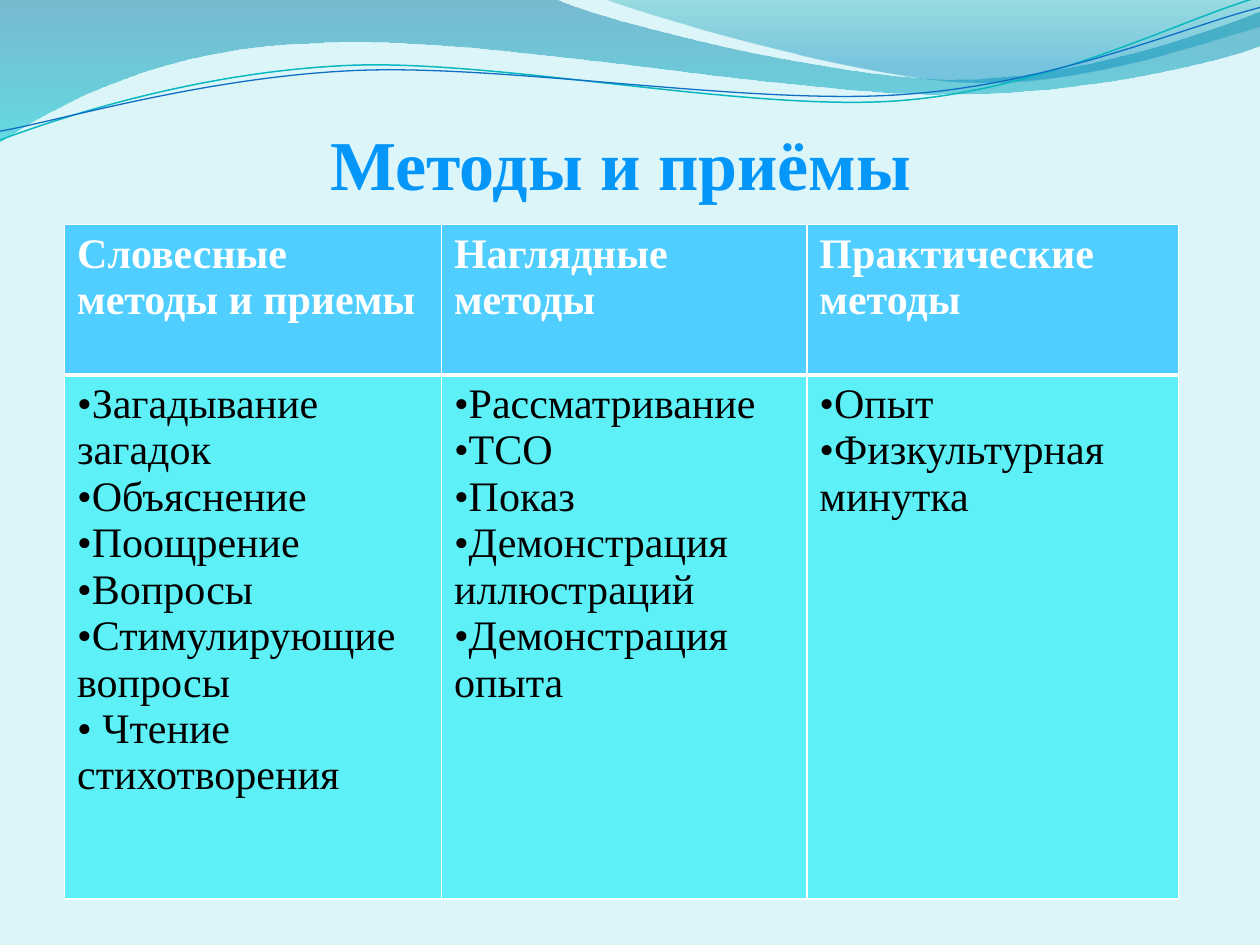
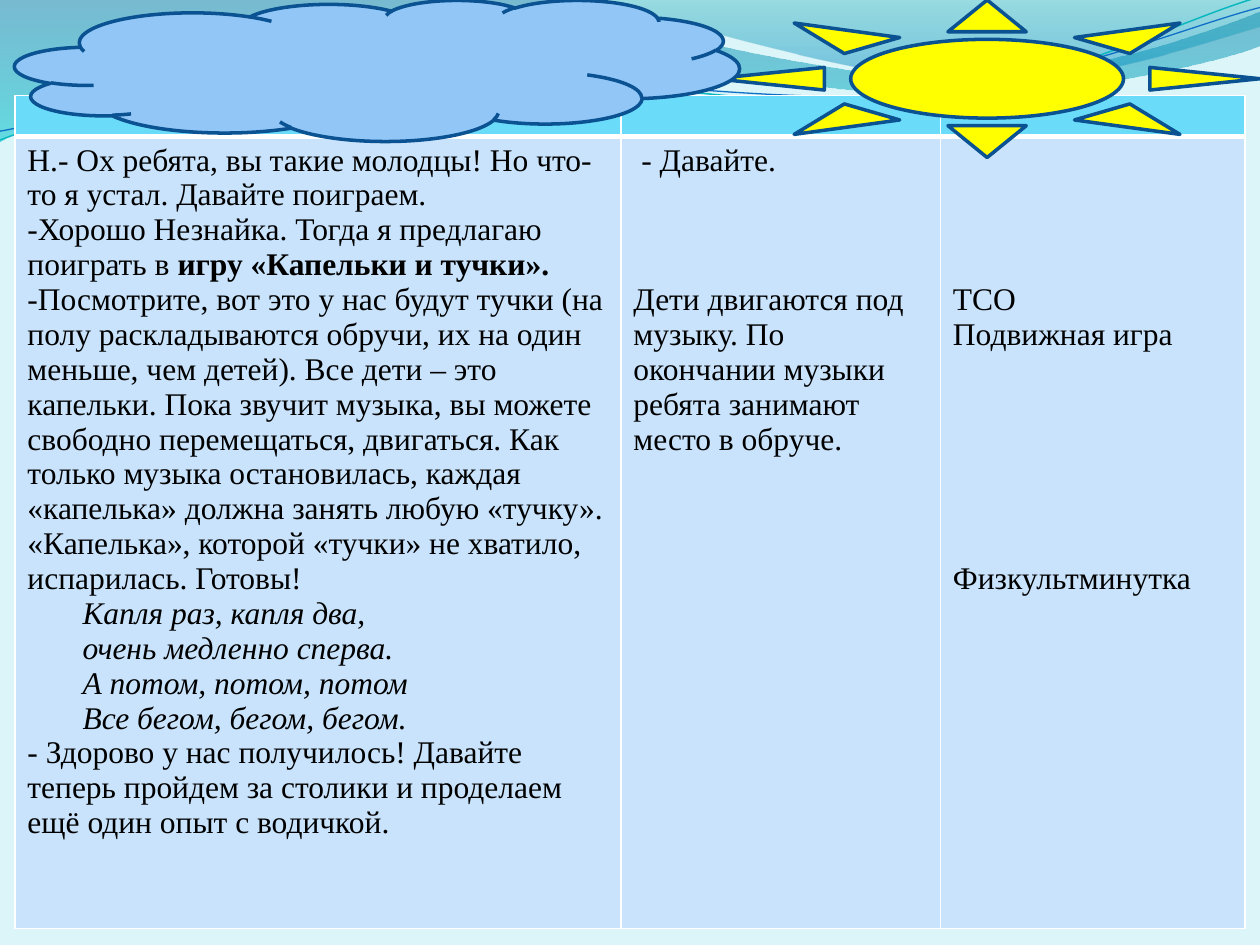
from dataclasses import dataclass

from lxml import etree
from pptx import Presentation
from pptx.dml import color
from pptx.enum import shapes, text
from pptx.oxml import ns
from pptx.util import Pt

FONT = "Times New Roman"
BACKGROUND, WHITE, BLACK = "DBF5F9", "FFFFFF", "000000"
TITLE_BLUE, OUTLINE_BLUE = "0497F9", "0B5292"
LINE_HEIGHT = 19.93  # one line of 18 pt body text

# Each band: start point, then curves (six numbers) and straight lines (two).
WIDE_WAVE = [(0, 0), (317, -0.7), (343, 12, 478, 45.2, 546, 45.2),
             (614, 45.2, 690, 18.7, 720, 6.5), (720.7, 26),
             (708, 31.7, 626, 54.7, 537, 54), (447.8, 54, 275, 20.2, 185, 24.5),
             (93, 26, 33, 59.8, -0.7, 81.4)]
CORNER_WAVE = [(345, -0.7), (366.5, 8, 491, 44.6, 553.7, 46.8),
               (616.3, 49.7, 692, 23, 720, 15.1), (720, 0)]
TEAL_STRAND = [(0, 80), (34.6, 67, 113.8, 41, 199.4, 37.4),
               (284.4, 33.8, 427, 64, 513.4, 57.6),
               (599.8, 51.1, 675.4, 10.8, 718.6, -1.4)]
BLUE_STRAND = [(0, 75), (33.8, 69.1, 118, 43.9, 203.8, 40.3),
               (290.2, 36.7, 430, 60.5, 516.2, 54),
               (602, 48.2, 677.5, 15.1, 720, 4.3)]


@dataclass
class Para:
    text: str
    bold_tail: str = ""
    bullet: str = ""
    italic: bool = False
    indent: float = 0
    lines_before: int = 0


def rgb(value):
    return color.RGBColor.from_string(value)


def add_xml(parent, tag, **attributes):
    return etree.SubElement(parent, ns.qn(tag), attributes)


class Deck:
    def __init__(self):
        self.prs = Presentation()
        self.prs.slide_width, self.prs.slide_height = Pt(720), Pt(540)
        fill = self.prs.slide_master.background.fill
        fill.solid()
        fill.fore_color.rgb = rgb(BACKGROUND)
        self.slide = None

    def new_slide(self):
        self.slide = self.prs.slides.add_slide(self.prs.slide_layouts[6])
        self.wave(WIDE_WAVE, [(0, "0074A1", 45), (100, "00C6CF", 55)])
        self.wave(CORNER_WAVE, [(0, "00A1A9", 30), (80, "008BBF", 45)])
        self.strand(TEAL_STRAND, "0AB8BF", 0.85)
        self.strand(BLUE_STRAND, "0F6FC6", 0.75)

    def outline(self, steps, close):
        """Build a freeform through the end points, then bend its curved segments."""
        anchors = [(Pt(step[-2]), Pt(step[-1])) for step in steps]
        builder = self.slide.shapes.build_freeform(*anchors[0])
        builder.add_line_segments(anchors[1:], close=close)
        band = builder.convert_to_shape()
        band.shadow.inherit = False
        segments = list(band._element.iter(ns.qn("a:lnTo")))
        for segment, step in zip(segments, steps[1:]):
            if len(step) == 2:
                continue
            curve = etree.Element(ns.qn("a:cubicBezTo"))
            for x, y in zip(step[::2], step[1::2]):
                add_xml(curve, "a:pt", x=str(Pt(x) - band.left), y=str(Pt(y) - band.top))
            segment.getparent().replace(segment, curve)
        return band

    def wave(self, steps, stops):
        """Draw a closed band; stops are (position %, colour, opacity %)."""
        band = self.outline(steps, True)
        band.line.fill.background()
        band.fill.gradient()
        gradient = band._element.spPr.find(ns.qn("a:gradFill"))
        for child in list(gradient):
            gradient.remove(child)
        stop_list = add_xml(gradient, "a:gsLst")
        for position, value, opacity in stops:
            stop = add_xml(stop_list, "a:gs", pos=str(position * 1000))
            tint = add_xml(stop, "a:srgbClr", val=value)
            add_xml(tint, "a:alpha", val=str(opacity * 1000))
        add_xml(gradient, "a:lin", ang="5400000", scaled="0")

    def strand(self, steps, value, width):
        band = self.outline(steps, False)
        band.fill.background()
        band.line.color.rgb = rgb(value)
        band.line.width = Pt(width)

    def style(self, paragraph, size, value, bold=False, italic=False):
        font = paragraph.font
        font.name, font.size = FONT, Pt(size)
        font.bold, font.italic = bold, italic
        font.color.rgb = rgb(value)

    def title(self, wording):
        box = self.slide.shapes.add_textbox(Pt(25.2), Pt(55.4), Pt(659), Pt(61.2))
        frame = box.text_frame
        frame.word_wrap = True
        frame.vertical_anchor = text.MSO_ANCHOR.BOTTOM
        frame.margin_left = frame.margin_right = frame.margin_bottom = 0
        paragraph = frame.paragraphs[0]
        paragraph.text = wording
        paragraph.alignment = text.PP_ALIGN.CENTER
        self.style(paragraph, 40, TITLE_BLUE, bold=True)

    def borders(self, cell, is_header):
        widths = {"L": 1, "R": 1, "T": 1, "B": 3 if is_header else 1}
        properties = cell._tc.get_or_add_tcPr()
        for side, width in widths.items():
            edge = add_xml(properties, f"a:ln{side}", w=str(Pt(width)))
            add_xml(add_xml(edge, "a:solidFill"), "a:srgbClr", val=WHITE)

    def fill_cell(self, cell, paras, size, value, bold):
        if not paras:
            cell.margin_top = cell.margin_bottom = 0
            self.style(cell.text_frame.paragraphs[0], 14, value)
        for i, para in enumerate(paras):
            frame = cell.text_frame
            paragraph = frame.add_paragraph() if i else frame.paragraphs[0]
            properties = paragraph._p.get_or_add_pPr()
            properties.set("marL", str(Pt(para.indent)))
            properties.set("indent", "0")
            if para.bullet:
                add_xml(properties, "a:buFont", typeface=FONT)
                add_xml(properties, "a:buChar", char=para.bullet)
            gap = para.lines_before * LINE_HEIGHT
            if gap and i:
                paragraph.space_before = Pt(gap)
            elif gap:
                cell.margin_top = Pt(3.6 + gap)
            paragraph.add_run().text = para.text
            if para.bold_tail:
                tail = paragraph.add_run()
                tail.text = para.bold_tail
                tail.font.bold = True
            self.style(paragraph, size, value, bold, para.italic)

    def table(self, left, top, widths, heights, rows, fills, size):
        """Draw a header row and a body row; each cell is a list of Para."""
        grid = self.slide.shapes.add_table(
            len(heights), len(widths), Pt(left), Pt(top),
            Pt(sum(widths)), Pt(sum(heights))).table
        grid.horz_banding = False
        for column, width in zip(grid.columns, widths):
            column.width = Pt(width)
        for r, height in enumerate(heights):
            grid.rows[r].height = Pt(height)
            is_header = r == 0
            for c, paras in enumerate(rows[r]):
                cell = grid.cell(r, c)
                self.borders(cell, is_header)
                cell.fill.solid()
                cell.fill.fore_color.rgb = rgb(fills[r])
                self.fill_cell(cell, paras, size, WHITE if is_header else BLACK, is_header)

    def shape(self, kind, left, top, width, height, value):
        figure = self.slide.shapes.add_shape(kind, Pt(left), Pt(top), Pt(width), Pt(height))
        figure.shadow.inherit = False
        figure.fill.solid()
        figure.fill.fore_color.rgb = rgb(value)
        figure.line.color.rgb = rgb(OUTLINE_BLUE)
        figure.line.width = Pt(2)


def methods_slide(deck):
    deck.new_slide()
    deck.title("Методы и приёмы")
    methods = {
        "Словесные методы и приемы": [
            "Загадывание загадок", "Объяснение", "Поощрение", "Вопросы",
            "Стимулирующие вопросы", " Чтение стихотворения"],
        "Наглядные методы": [
            "Рассматривание", "ТСО", "Показ", "Демонстрация иллюстраций",
            "Демонстрация опыта"],
        "Практические методы": ["Опыт", "Физкультурная минутка"],
    }
    headings = [[Para(name)] for name in methods]
    lists = [[Para(item, bullet="•") for item in items] for items in methods.values()]
    deck.table(36.9, 128.2, [215.4, 208.8, 212.4], [86, 299.5],
               [headings, lists], ["4FCEFF", "5EF0F7"], 24)


def game_slide(deck):
    deck.new_slide()
    rhyme = ["Капля раз, капля два,", "очень медленно сперва.",
             "А потом, потом, потом", "Все бегом, бегом, бегом."]
    teacher = [
        Para("Н.- Ох ребята, вы такие молодцы! Но что-то я устал. Давайте поиграем."),
        Para("Хорошо Незнайка. Тогда я предлагаю поиграть в ",
             bold_tail="игру «Капельки и тучки».", bullet="-"),
        Para("Посмотрите, вот это у нас будут тучки (на полу раскладываются обручи, "
             "их на один меньше, чем детей). Все дети – это капельки. Пока звучит "
             "музыка, вы можете свободно перемещаться, двигаться. Как только музыка "
             "остановилась, каждая «капелька» должна занять любую «тучку». "
             "«Капелька», которой «тучки» не хватило, испарилась. Готовы!", bullet="-"),
        *[Para(verse, italic=True, indent=31.5) for verse in rhyme],
        Para("- Здорово у нас получилось! Давайте теперь пройдем за столики "
             "и проделаем ещё один опыт с водичкой."),
    ]
    children = [
        Para("- Давайте.", indent=4.5),
        Para("Дети двигаются под музыку. По окончании музыки ребята занимают "
             "место в обруче.", lines_before=3),
    ]
    methods = [Para("ТСО", lines_before=4), Para("Подвижная игра"),
               Para("Физкультминутка", lines_before=6)]
    deck.table(8.5, 54.7, [346.3, 182.6, 174], [23.4, 452.6],
               [[[], [], []], [teacher, children, methods]], ["6BDBFA", "C8E3FB"], 18)
    deck.shape(shapes.MSO_SHAPE.SUN, 408.2, 0, 311.8, 90, "FFFF00")
    deck.shape(shapes.MSO_SHAPE.CLOUD, 8.5, 0, 414, 80.6, "91C6F7")


def main():
    deck = Deck()
    methods_slide(deck)
    game_slide(deck)
    deck.prs.save("out.pptx")


if __name__ == "__main__":
    main()
